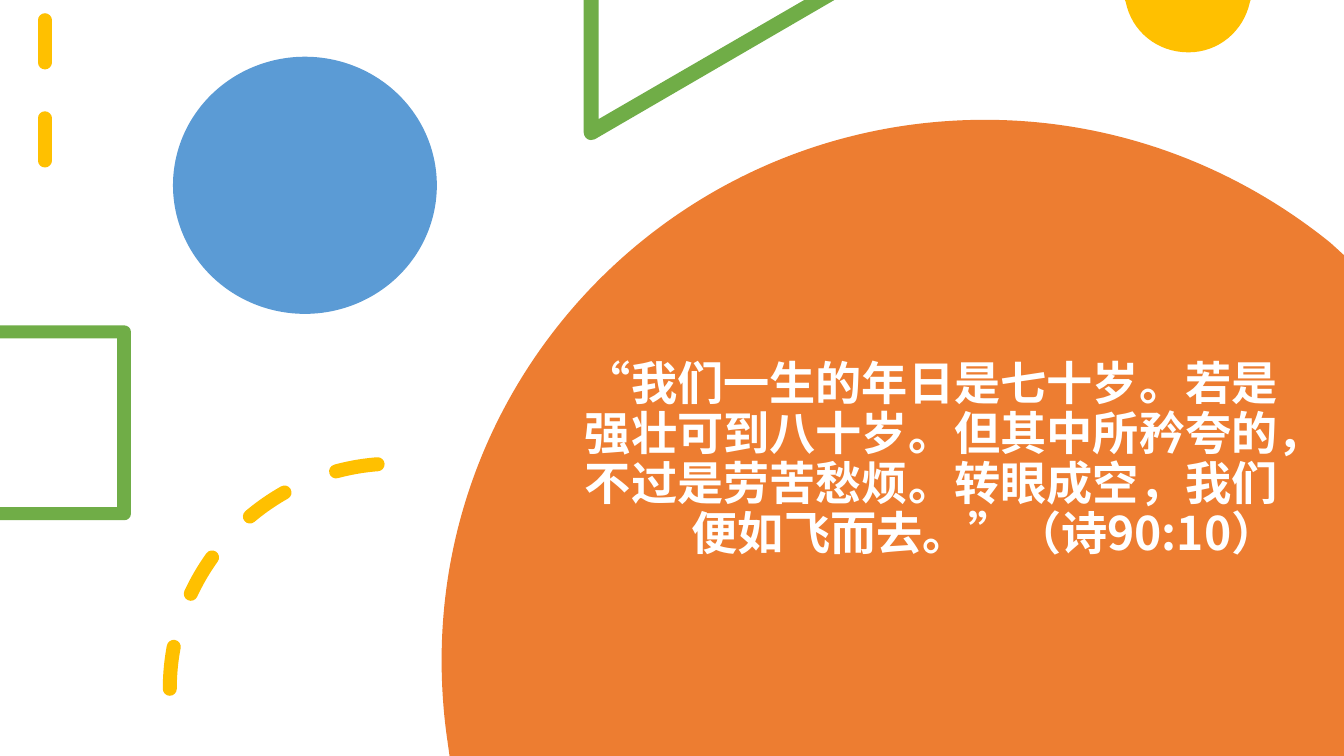
from lxml.etree import SubElement
from pptx import Presentation
from pptx.dml.color import RGBColor
from pptx.enum.dml import MSO_LINE
from pptx.enum.lang import MSO_LANGUAGE_ID
from pptx.enum.shapes import MSO_CONNECTOR, MSO_SHAPE
from pptx.enum.text import MSO_ANCHOR, PP_ALIGN
from pptx.oxml.ns import qn
from pptx.util import Cm, Pt

COLORS = {
    "orange": "ED7D31",
    "green": "70AD47",
    "yellow": "FFC000",
    "blue": "5B9BD5",
    "white": "FFFFFF",
}
FONT = "Noto Sans CJK SC"
WIDTH, HEIGHT = 33.87, 19.05


def fill_plain(figure, color):
    figure.shadow.inherit = False
    figure.fill.solid()
    figure.fill.fore_color.rgb = RGBColor.from_string(COLORS[color])
    figure.line.fill.background()


def add_outline(shapes, steps, color):
    """Each step holds one point for a line or three points for a cubic curve, in cm."""
    points = [(Cm(x), Cm(y)) for step in steps for x, y in step]
    builder = shapes.build_freeform(*points[0])
    builder.add_line_segments(points[1:], close=True)
    figure = builder.convert_to_shape()
    segments = iter(list(figure._element.iter(qn("a:lnTo"))))
    for step in steps[1:]:
        first, *others = [next(segments) for _ in step]
        if others:
            bezier = first.makeelement(qn("a:cubicBezTo"))
            first.addprevious(bezier)
            for segment in (first, *others):
                bezier.append(segment[0])
                segment.getparent().remove(segment)
    fill_plain(figure, color)


prs = Presentation()
prs.slide_width, prs.slide_height = Cm(WIDTH), Cm(HEIGHT)
slide = prs.slides.add_slide(prs.slide_layouts[6])
shapes = slide.shapes

# Figures cut off by the slide edges
orange_circle = [
    [(24.82, 3.02)],
    [(28.12, 3.02), (31.14, 4.19), (33.53, 6.12)],
    [(WIDTH, 6.43)], [(WIDTH, HEIGHT)], [(11.33, HEIGHT)], [(11.28, 18.69)],
    [(11.18, 18.03), (11.13, 17.32), (11.13, 16.64)],
    [(11.13, 9.12), (17.25, 3.02), (24.82, 3.02)],
]
green_triangle = [
    [(14.71, 0)], [(15.09, 0)], [(15.09, 3)], [(20.27, 0)], [(21.03, 0)], [(14.99, 3.51)],
    [(14.96, 3.52), (14.93, 3.53), (14.89, 3.53)],
    [(14.79, 3.53), (14.71, 3.44), (14.71, 3.33)],
]
yellow_cap = [
    [(28.35, 0)], [(31.52, 0)], [(31.5, 0.05)],
    [(31.34, 0.79), (30.71, 1.32), (29.95, 1.32)],
    [(29.16, 1.32), (28.52, 0.79), (28.37, 0.05)],
]
green_frame = [
    [(3.13, 8.2)], [(0, 8.2)], [(0, 8.53)], [(2.95, 8.53)],
    [(2.95, 12.78)], [(0, 12.78)], [(0, 13.11)], [(3.13, 13.11)],
    [(3.22, 13.11), (3.3, 13.04), (3.3, 12.95)],
    [(3.3, 8.36)],
    [(3.3, 8.27), (3.22, 8.2), (3.13, 8.2)],
]

add_outline(shapes, orange_circle, "orange")

# Bible verse
verse = shapes.add_textbox(Cm(14.14), Cm(7.62), Cm(18.31), Cm(6.63)).text_frame
verse.word_wrap = True
verse.vertical_anchor = MSO_ANCHOR.BOTTOM
paragraph = verse.paragraphs[0]
paragraph.text = (
    "“我们一生的年日是七十岁。若是强壮可到八十岁。但其中所矜夸的，"
    "不过是劳苦愁烦。转眼成空，我们便如飞而去。”（诗90:10）"
)
paragraph.alignment = PP_ALIGN.RIGHT
paragraph.line_spacing = 0.9
paragraph.space_after = Pt(6)
font = paragraph.font
font.size = Pt(33)
font.bold = True
font.name = FONT
font.language_id = MSO_LANGUAGE_ID.SIMPLIFIED_CHINESE
font.color.rgb = RGBColor.from_string(COLORS["white"])
SubElement(font._element, qn("a:ea")).set("typeface", FONT)

dashed_line = shapes.add_connector(MSO_CONNECTOR.STRAIGHT, Cm(1.13), Cm(0.51), Cm(1.13), Cm(4.95))
SubElement(dashed_line._element.spPr, qn("a:effectLst"))

add_outline(shapes, green_triangle, "green")
add_outline(shapes, yellow_cap, "yellow")
blue_circle = shapes.add_shape(MSO_SHAPE.OVAL, Cm(4.36), Cm(1.43), Cm(6.65), Cm(6.48))
fill_plain(blue_circle, "blue")
add_outline(shapes, green_frame, "green")

dashed_arc = shapes.add_shape(MSO_SHAPE.ARC, Cm(4.28), Cm(11.68), Cm(11.35), Cm(11.35))
dashed_arc.rotation = 270
dashed_arc.shadow.inherit = False
dashed_arc.fill.background()

# Dashed strokes with round ends
for stroke in (dashed_line, dashed_arc):
    stroke.line.color.rgb = RGBColor.from_string(COLORS["yellow"])
    stroke.line.width = Pt(10)
    stroke.line.dash_style = MSO_LINE.DASH
    stroke._element.spPr.find(qn("a:ln")).set("cap", "rnd")

prs.save("out.pptx")
